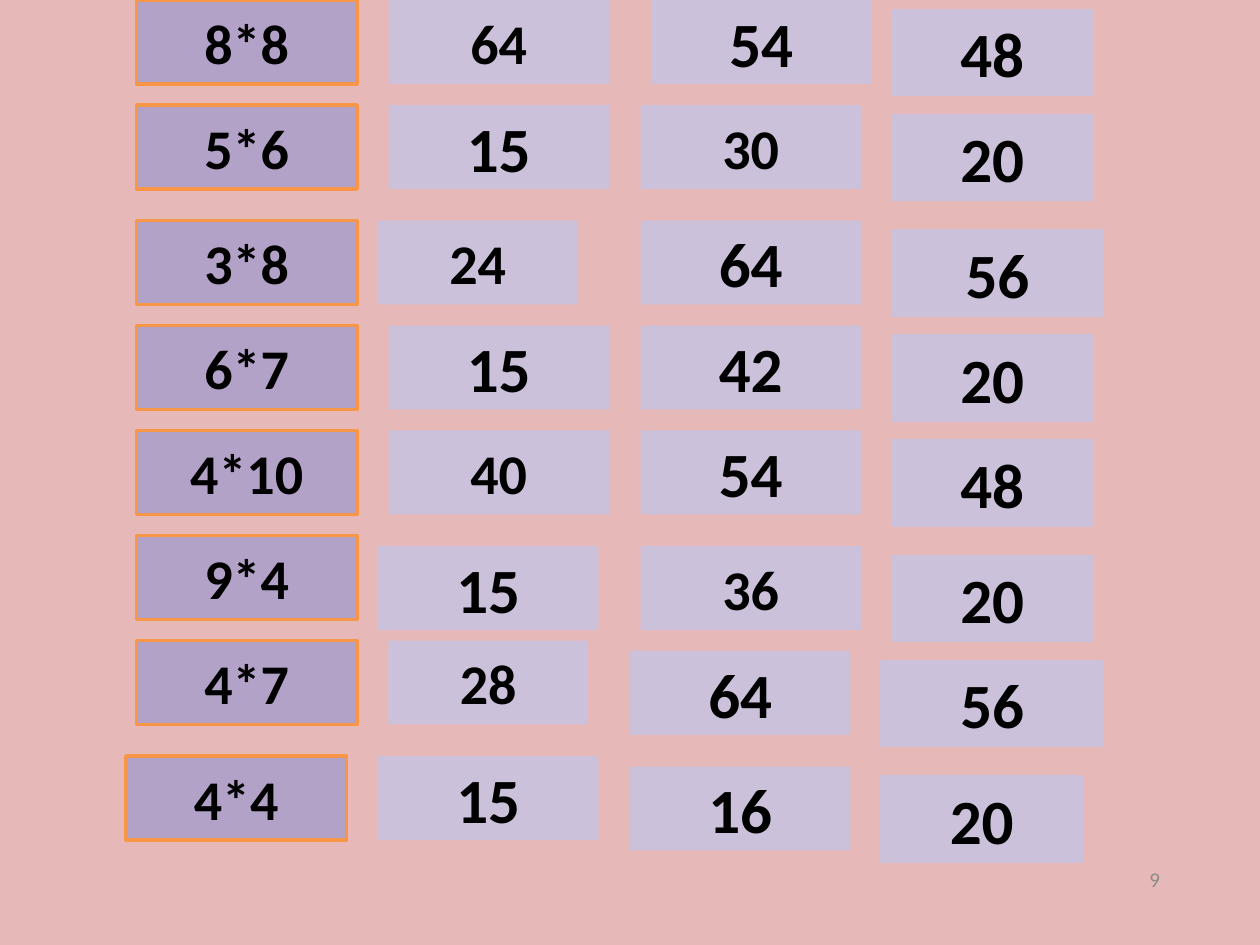
from dataclasses import dataclass

from pptx import Presentation
from pptx.dml.color import RGBColor
from pptx.enum.shapes import MSO_SHAPE
from pptx.enum.text import MSO_ANCHOR, PP_ALIGN
from pptx.util import Cm, Pt

RECTANGLE = MSO_SHAPE.RECTANGLE
MIDDLE = MSO_ANCHOR.MIDDLE
CENTER = PP_ALIGN.CENTER

PINK = RGBColor(0xE6, 0xB9, 0xB8)
PURPLE = RGBColor(0xB3, 0xA2, 0xC7)
LILAC = RGBColor(0xCC, 0xC1, 0xDA)
ORANGE = RGBColor(0xF7, 0x96, 0x46)
BLACK = RGBColor(0x00, 0x00, 0x00)
GREY = RGBColor(0x8C, 0x8C, 0x8C)

FONT = "Calibri"
SMALL, LARGE = 32, 36
GRID = Cm(2.54) // 12  # every card sits on a grid of twelve steps to the inch
CARD_HEIGHT = 8
QUESTION_LEFT, QUESTION_WIDTH = 13, 21
ANSWER_LEFTS = (37, 61, 85)
ANSWER_OUTLINES = (None, None, LILAC)


@dataclass
class Answer:
    """An answer card; shift and drop are grid steps from its column and row."""
    text: str
    size: int = LARGE
    shift: int = 0
    drop: int = 0
    width: int = 21


# Row top, question, shift of the question, answers from left to right
ROWS = [
    (0, "8*8", 0, [Answer("64", SMALL), Answer("54", shift=1),
                   Answer("48", drop=1, width=19)]),
    (10, "5*6", 0, [Answer("15"), Answer("30", SMALL),
                    Answer("20", drop=1, width=19)]),
    (21, "3*8", 0, [Answer("24", SMALL, shift=-1, width=19), Answer("64"),
                    Answer("56", drop=1, width=20)]),
    (31, "6*7", 0, [Answer("15"), Answer("42"),
                    Answer("20", drop=1, width=19)]),
    (41, "4*10", 0, [Answer("40", SMALL), Answer("54"),
                     Answer("48", drop=1, width=19)]),
    (51, "9*4", 0, [Answer("15", shift=-1, drop=1), Answer("36", SMALL, drop=1),
                    Answer("20", drop=2, width=19)]),
    (61, "4*7", 0, [Answer("28", SMALL, width=19), Answer("64", shift=-1, drop=1),
                    Answer("56", shift=-1, drop=2)]),
    (72, "4*4", -1, [Answer("15", shift=-1), Answer("16", shift=-1, drop=1),
                     Answer("20", shift=-1, drop=2, width=19)]),
]


def write_text(shape, text, size, color, bold=False):
    frame = shape.text_frame
    frame.word_wrap = True
    frame.vertical_anchor = MIDDLE
    paragraph = frame.paragraphs[0]
    paragraph.alignment = CENTER
    run = paragraph.add_run()
    run.text = text
    run.font.name = FONT
    run.font.size = Pt(size)
    run.font.bold = bold
    run.font.color.rgb = color


def add_card(slide, left, top, width, text, size, fill, outline=None):
    """Place a card whose left, top and width are given in grid steps."""
    box = [steps * GRID for steps in (left, top, width, CARD_HEIGHT)]
    shape = slide.shapes.add_shape(RECTANGLE, *box)
    shape.shadow.inherit = False
    shape.fill.solid()
    shape.fill.fore_color.rgb = fill
    if outline is None:
        shape.line.fill.background()
    else:
        shape.line.color.rgb = outline
        shape.line.width = Pt(2)
    write_text(shape, text, size, BLACK, bold=True)


def add_quiz_row(slide, top, question, shift, answers):
    add_card(slide, QUESTION_LEFT + shift, top, QUESTION_WIDTH,
             question, SMALL, PURPLE, ORANGE)
    for left, outline, answer in zip(ANSWER_LEFTS, ANSWER_OUTLINES, answers):
        add_card(slide, left + answer.shift, top + answer.drop, answer.width,
                 answer.text, answer.size, LILAC, outline)


def add_page_number(slide, left, top, width, height, number):
    shape = slide.shapes.add_textbox(left, top, width, height)
    write_text(shape, number, 12, GREY)


def main():
    presentation = Presentation()
    presentation.slide_width = Cm(25.4)
    presentation.slide_height = Cm(19.05)
    blank_layout = presentation.slide_layouts[6]
    slide = presentation.slides.add_slide(blank_layout)
    slide.background.fill.solid()
    slide.background.fill.fore_color.rgb = PINK

    add_page_number(slide, Cm(20.32), Cm(17.22), Cm(5.92), Cm(1.02), "9")
    for row in ROWS:
        add_quiz_row(slide, *row)

    presentation.save("out.pptx")


if __name__ == "__main__":
    main()
